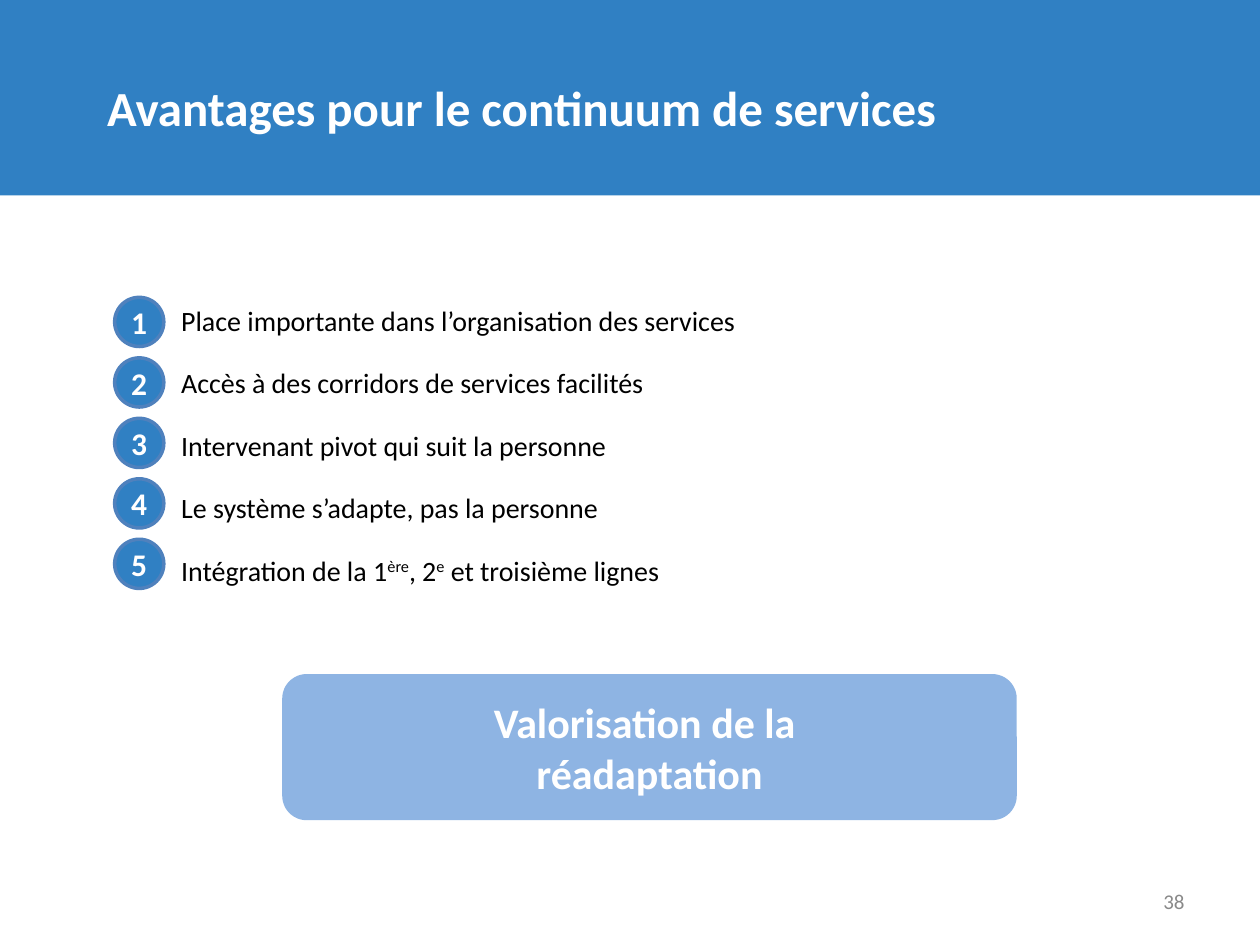
import pptx
import pptx.util
import pptx.dml.color
import pptx.enum.shapes
import pptx.enum.text

Inches = pptx.util.Inches
Pt = pptx.util.Pt
SHAPE = pptx.enum.shapes.MSO_SHAPE
ALIGN = pptx.enum.text.PP_ALIGN
ANCHOR = pptx.enum.text.MSO_ANCHOR

BLUE, LIGHT_BLUE, RING = "3080C3", "8EB4E3", "4F81BD"
WHITE, BLACK, GREY = "FFFFFF", "000000", "898989"

# Each advantage is a list of (text, is superscript)
ADVANTAGES = [
    [("Place importante dans l’organisation des services", False)],
    [("Accès à des corridors de services facilités", False)],
    [("Intervenant pivot qui suit la personne", False)],
    [("Le système s’adapte, pas la personne", False)],
    [("Intégration de la 1", False), ("ère", True), (", 2", False),
     ("e", True), (" et troisième lignes", False)],
]


def rgb(value):
    return pptx.dml.color.RGBColor.from_string(value)


def format_text(frame, size, color, bold=False, align=ALIGN.LEFT):
    for paragraph in frame.paragraphs:
        paragraph.alignment = align
        for run in paragraph.runs:
            run.font.name = "Calibri"
            run.font.size = Pt(size)
            run.font.bold = bold
            run.font.color.rgb = rgb(color)


def add_panel(slide, kind, left, top, width, height, fill, line=None):
    panel = slide.shapes.add_shape(
        kind, Inches(left), Inches(top), Inches(width), Inches(height))
    panel.shadow.inherit = False
    panel.fill.solid()
    panel.fill.fore_color.rgb = rgb(fill)
    if line:
        panel.line.color.rgb = rgb(line)
        panel.line.width = Pt(2)
    else:
        panel.line.fill.background()
    return panel


def add_text_frame(slide, left, top, width, height):
    box = slide.shapes.add_textbox(
        Inches(left), Inches(top), Inches(width), Inches(height))
    box.text_frame.word_wrap = True
    return box.text_frame


def add_header(slide):
    band = add_panel(slide, SHAPE.RECTANGLE, 0, 0, 10, 1.55, BLUE)
    title = slide.shapes.title
    title._element.addprevious(band._element)  # band goes behind the title
    title.left, title.top = Inches(0.75), Inches(0.42)
    title.width, title.height = Inches(8.27), Inches(0.71)
    frame = title.text_frame
    frame.text = "Avantages pour le continuum de services"
    frame.vertical_anchor = ANCHOR.MIDDLE
    frame.paragraphs[0].line_spacing = Pt(44)
    format_text(frame, 28, WHITE, bold=True)


def add_advantages(slide):
    frame = add_text_frame(slide, 1.34, 2.36, 4.74, 2.42)
    for index, parts in enumerate(ADVANTAGES):
        if index == 0:
            paragraph = frame.paragraphs[0]
        else:
            paragraph = frame.add_paragraph()
            paragraph.space_before = Pt(16.5)
        for text, superscript in parts:
            run = paragraph.add_run()
            run.text = text
            if superscript:
                run._r.get_or_add_rPr().set("baseline", "30000")
    format_text(frame, 16, BLACK)


def add_number(slide, number):
    top = 2.36 + 0.48 * (number - 1)
    badge = add_panel(slide, SHAPE.OVAL, 0.91, top, 0.39, 0.39, BLUE, RING)
    frame = badge.text_frame
    frame.margin_left = frame.margin_right = 0
    frame.margin_top = frame.margin_bottom = 0
    frame.word_wrap = False
    frame.vertical_anchor = ANCHOR.MIDDLE
    frame.text = str(number)
    format_text(frame, 18, WHITE, bold=True, align=ALIGN.CENTER)


def add_conclusion(slide):
    conclusion = add_panel(
        slide, SHAPE.ROUNDED_RECTANGLE, 2.24, 5.35, 5.83, 1.16, LIGHT_BLUE)
    frame = conclusion.text_frame
    frame.vertical_anchor = ANCHOR.MIDDLE
    frame.text = "Valorisation de la \nréadaptation"
    format_text(frame, 24, WHITE, bold=True, align=ALIGN.CENTER)


def add_page_number(slide):
    frame = add_text_frame(slide, 7.17, 6.95, 2.33, 0.4)
    frame.vertical_anchor = ANCHOR.MIDDLE
    frame.text = "38"
    format_text(frame, 12, GREY, align=ALIGN.RIGHT)


def main():
    presentation = pptx.Presentation()
    presentation.slide_width = Inches(10)
    presentation.slide_height = Inches(7.5)
    slide = presentation.slides.add_slide(presentation.slide_layouts[5])

    add_header(slide)
    add_advantages(slide)
    add_conclusion(slide)
    for number in range(1, len(ADVANTAGES) + 1):
        add_number(slide, number)
    add_page_number(slide)

    presentation.save("out.pptx")


if __name__ == "__main__":
    main()
